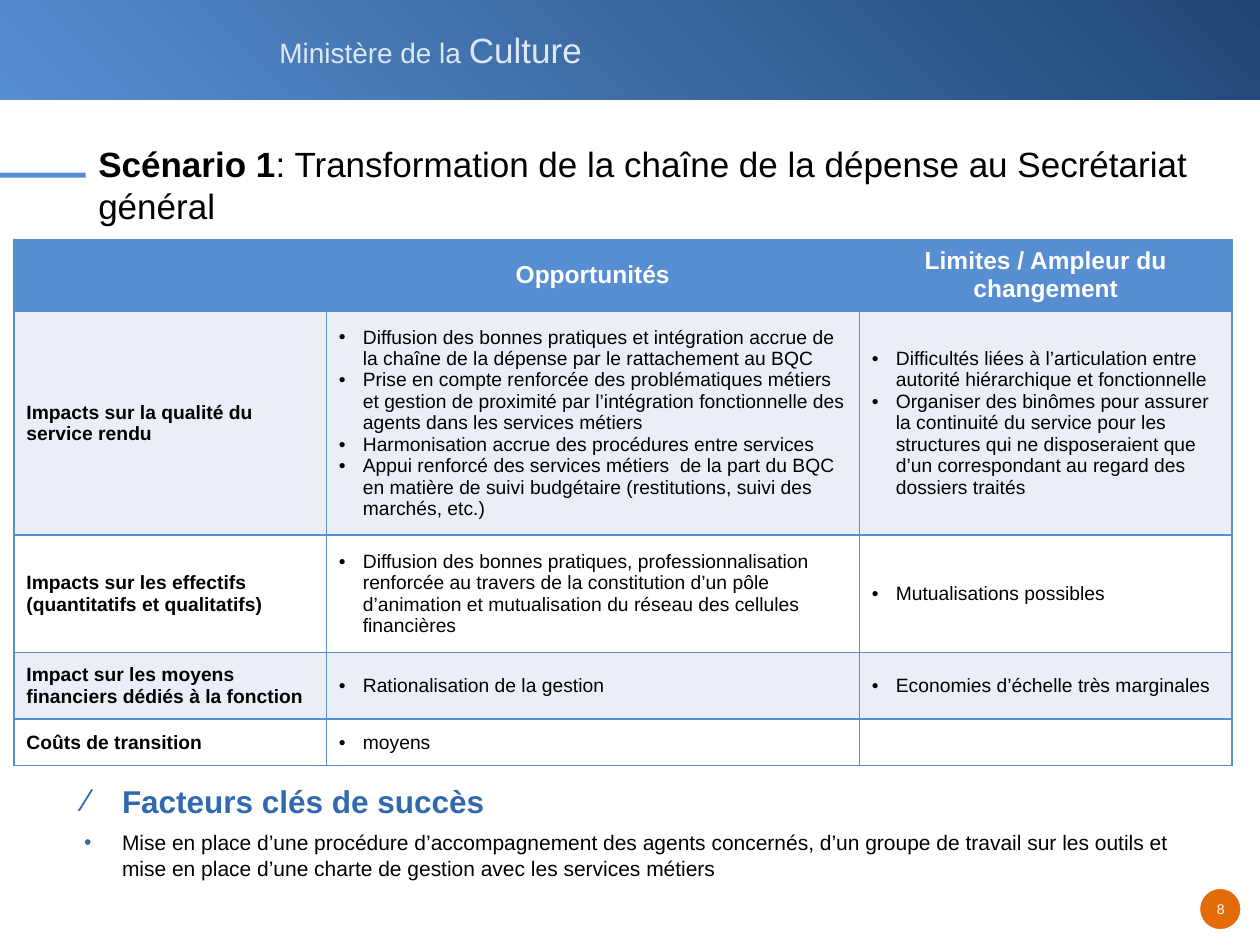
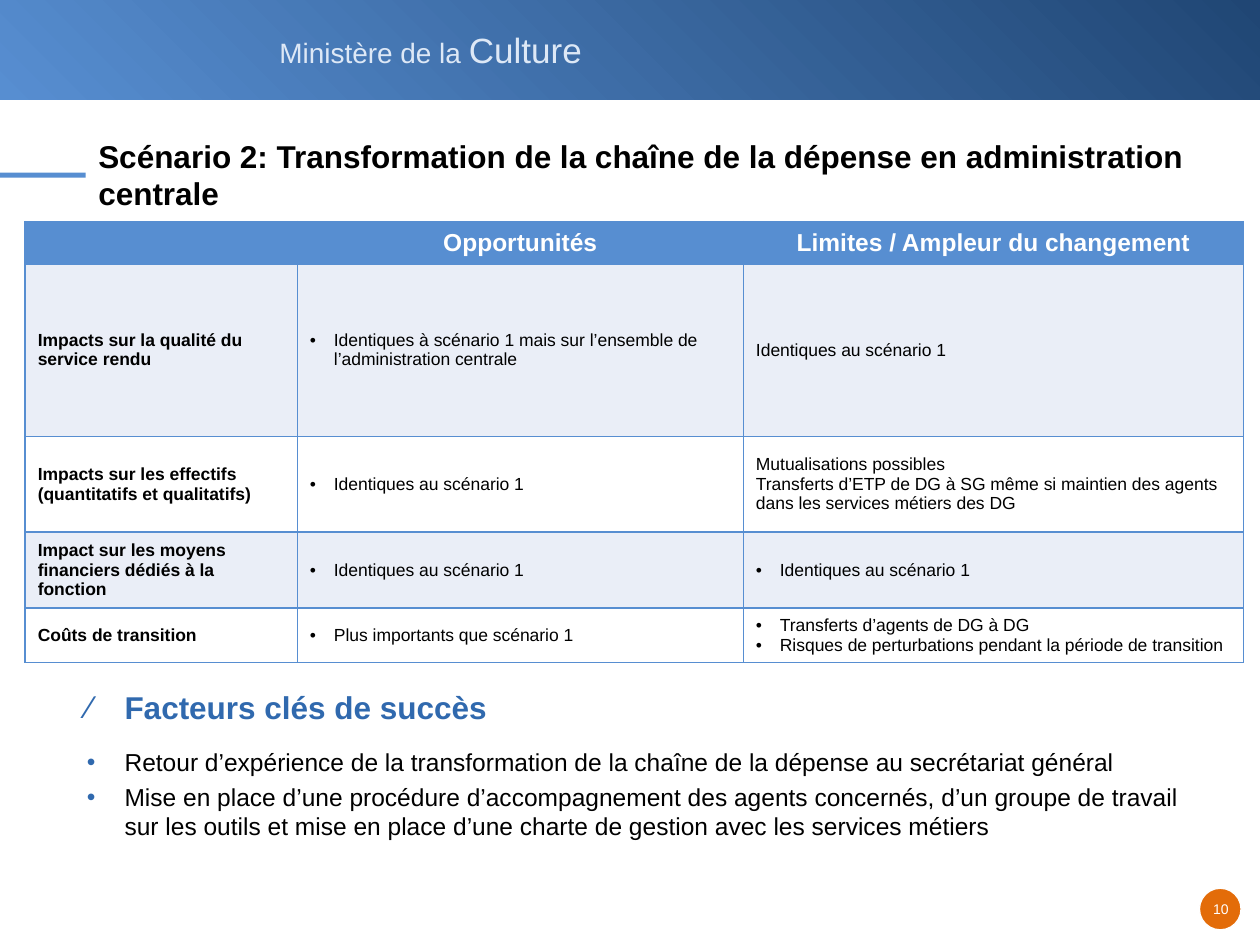
from dataclasses import dataclass
from typing import NamedTuple

from lxml.etree import SubElement
from pptx import Presentation
from pptx.dml.color import RGBColor
from pptx.enum.shapes import MSO_SHAPE
from pptx.enum.text import MSO_ANCHOR, MSO_AUTO_SIZE, PP_ALIGN
from pptx.oxml.ns import qn
from pptx.util import Emu, Pt

EMU_PER_PX = 9144


@dataclass(frozen=True)
class Theme:
    font: str = "Arial"
    blue: str = "578ED1"
    navy: str = "204674"
    heading: str = "3069AE"
    banner_text: str = "DDE8F6"
    orange: str = "E36C09"
    tint: str = "EAEEF7"
    white: str = "FFFFFF"
    black: str = "000000"
    ministry_size: int = 16
    name_size: int = 20
    heading_size: int = 18
    header_size: int = 14
    number_size: int = 8


class Box(NamedTuple):
    x: int
    y: int
    w: int
    h: int


class Run(NamedTuple):
    text: str
    bold: bool = False


class Cell(NamedTuple):
    lines: tuple[str, ...] = ()
    bullet: bool = True


class Row(NamedTuple):
    height: int
    label: str
    opportunities: Cell
    limits: Cell


@dataclass(frozen=True)
class Scenario:
    number: str
    title: tuple[Run, ...]
    title_box: Box
    title_size: int
    table_at: tuple[int, int]
    columns: tuple[int, ...]
    header_height: int
    table_size: int
    rows: tuple[Row, ...]
    factors_box: Box
    factors: tuple[str, ...]
    factors_size: int
    heading_gap: int


THEME = Theme()
HEADERS = ("", "Opportunités", "Limites / Ampleur du changement")
LABELS = (
    "Impacts sur la qualité du service rendu",
    "Impacts sur les effectifs (quantitatifs et qualitatifs)",
    "Impact sur les moyens financiers dédiés à la fonction",
    "Coûts de transition",
)
SAME = "Identiques au scénario 1"
SUPPORT = (
    "Mise en place d’une procédure d’accompagnement des agents concernés, d’un groupe de "
    "travail sur les outils et mise en place d’une charte de gestion avec les services métiers"
)

SCENARIOS = (
    Scenario(
        number="8",
        title=(
            Run("Scénario 1", True),
            Run(": Transformation de la chaîne de la dépense au Secrétariat général"),
        ),
        title_box=Box(68, 106, 888, 81),
        title_size=20,
        table_at=(11, 190),
        columns=(248, 423, 296),
        header_height=54,
        table_size=11,
        rows=(
            Row(178, LABELS[0], Cell((
                "Diffusion des bonnes pratiques et intégration accrue de la chaîne de la "
                "dépense par le rattachement au BQC",
                "Prise en compte renforcée des problématiques métiers et gestion de proximité "
                "par l’intégration fonctionnelle des agents dans les services métiers",
                "Harmonisation accrue des procédures entre services",
                "Appui renforcé des services métiers  de la part du BQC en matière de suivi "
                "budgétaire (restitutions, suivi des marchés, etc.)",
            )), Cell((
                "Difficultés liées à l’articulation entre autorité hiérarchique et fonctionnelle",
                "Organiser des binômes pour assurer la continuité du service pour les "
                "structures qui ne disposeraient que d’un correspondant au regard des "
                "dossiers traités",
            ))),
            Row(93, LABELS[1], Cell((
                "Diffusion des bonnes pratiques, professionnalisation renforcée au travers de "
                "la constitution d’un pôle d’animation et mutualisation du réseau des "
                "cellules financières",
            )), Cell(("Mutualisations possibles",))),
            Row(53, LABELS[2], Cell(("Rationalisation de la gestion",)),
                Cell(("Economies d’échelle très marginales",))),
            Row(37, LABELS[3], Cell(("moyens",)), Cell()),
        ),
        factors_box=Box(57, 619, 889, 97),
        factors=(SUPPORT,),
        factors_size=12,
        heading_gap=6,
    ),
    Scenario(
        number="10",
        title=(
            Run("Scénario 2: Transformation de la chaîne de la dépense en administration "
                "centrale", True),
        ),
        title_box=Box(68, 106, 888, 65),
        title_size=18,
        table_at=(20, 176),
        columns=(216, 354, 397),
        header_height=33,
        table_size=10,
        rows=(
            Row(137, LABELS[0], Cell((
                "Identiques à scénario 1 mais sur l’ensemble de l’administration centrale",
            )), Cell((SAME,), bullet=False)),
            Row(76, LABELS[1], Cell((SAME,)), Cell((
                "Mutualisations possibles",
                "Transferts d’ETP de DG à SG même si maintien des agents dans les services "
                "métiers des DG",
            ), bullet=False)),
            Row(59, LABELS[2], Cell((SAME,)), Cell((SAME,))),
            Row(43, LABELS[3], Cell(("Plus importants que scénario 1",)), Cell((
                "Transferts d’agents de DG à DG",
                "Risques de perturbations pendant la période de transition",
            ))),
        ),
        factors_box=Box(59, 545, 889, 152),
        factors=(
            "Retour d’expérience de la transformation de la chaîne de la dépense au "
            "secrétariat général",
            SUPPORT,
        ),
        factors_size=14,
        heading_gap=12,
    ),
)


def px(n: int) -> Emu:
    return Emu(n * EMU_PER_PX)


def rgb(color: str) -> RGBColor:
    return RGBColor.from_string(color)


def add_run(p, text: str, *, size: int, color: str = THEME.black, bold: bool = False) -> None:
    r = p.add_run()
    r.text = text
    r.font.name = THEME.font
    r.font.size = Pt(size)
    r.font.bold = bold
    r.font.color.rgb = rgb(color)


def add_bullet(p, char: str, indent: int, color: str | None = None) -> None:
    ppr = p._p.get_or_add_pPr()
    ppr.set("marL", str(px(indent)))
    ppr.set("indent", str(-px(indent)))
    if color:
        SubElement(SubElement(ppr, qn("a:buClr")), qn("a:srgbClr"), val=color)
    SubElement(ppr, qn("a:buFont"), typeface=THEME.font)
    SubElement(ppr, qn("a:buChar"), char=char)


def next_paragraph(tf, index: int):
    return tf.add_paragraph() if index else tf.paragraphs[0]


def add_text_box(s, box: Box, wrap: bool = True):
    tf = s.shapes.add_textbox(*map(px, box)).text_frame
    tf.word_wrap = wrap
    return tf


def add_block(s, kind: MSO_SHAPE, box: Box, color: str | None = None):
    sp = s.shapes.add_shape(kind, *map(px, box))
    sp.shadow.inherit = False
    sp.line.fill.background()
    if color:
        sp.fill.solid()
        sp.fill.fore_color.rgb = rgb(color)
    return sp


def add_frame(s, number: str) -> None:
    band = add_block(s, MSO_SHAPE.RECTANGLE, Box(0, 0, 1000, 79))
    band.fill.gradient()
    band.fill.gradient_angle = 225
    for stop, color in zip(band.fill.gradient_stops, (THEME.navy, THEME.blue)):
        stop.color.rgb = rgb(color)
    p = add_text_box(s, Box(212, 18, 263, 44), wrap=False).paragraphs[0]
    add_run(p, "Ministère de la ", size=THEME.ministry_size, color=THEME.banner_text)
    add_run(p, "Culture", size=THEME.name_size, color=THEME.banner_text)

    add_block(s, MSO_SHAPE.RECTANGLE, Box(0, 137, 68, 4), THEME.blue)
    badge = add_block(s, MSO_SHAPE.OVAL, Box(952, 705, 33, 33), THEME.orange)
    badge.line.color.rgb = rgb(THEME.white)
    badge.line.width = Pt(0.75)
    tf = add_text_box(s, Box(954, 710, 30, 23), wrap=False)
    tf.margin_left = tf.margin_right = tf.margin_top = tf.margin_bottom = px(5)
    p = tf.paragraphs[0]
    p.alignment = PP_ALIGN.CENTER
    add_run(p, number, size=THEME.number_size, color=THEME.white)


def set_title(s, runs: tuple[Run, ...], box: Box, size: int) -> None:
    sp = s.shapes.title
    sp.left, sp.top, sp.width, sp.height = map(px, box)
    tf = sp.text_frame
    tf.word_wrap = True
    tf.auto_size = MSO_AUTO_SIZE.NONE
    tf.vertical_anchor = MSO_ANCHOR.MIDDLE
    p = tf.paragraphs[0]
    p.alignment = PP_ALIGN.LEFT
    for run in runs:
        add_run(p, run.text, size=size, bold=run.bold)


def fill_cell(cell, content: Cell, *, fill: str, size: int, color: str = THEME.black,
              bold: bool = False, align: PP_ALIGN = PP_ALIGN.LEFT) -> None:
    tcpr = cell._tc.get_or_add_tcPr()
    for side in ("lnL", "lnR", "lnT", "lnB"):
        ln = SubElement(tcpr, qn(f"a:{side}"), w=str(Pt(1)))
        SubElement(SubElement(ln, qn("a:solidFill")), qn("a:srgbClr"), val=THEME.blue)
    cell.fill.solid()
    cell.fill.fore_color.rgb = rgb(fill)
    cell.vertical_anchor = MSO_ANCHOR.MIDDLE
    tf = cell.text_frame
    for i, line in enumerate(content.lines):
        p = next_paragraph(tf, i)
        p.alignment = align
        if content.bullet:
            add_bullet(p, "•", 19)
        add_run(p, line, size=size, color=color, bold=bold)
    if not content.lines:
        SubElement(tf.paragraphs[0]._p, qn("a:endParaRPr"), sz=str(size * 100))


def add_impacts(s, sc: Scenario) -> None:
    heights = (sc.header_height, *(row.height for row in sc.rows))
    box = Box(*sc.table_at, sum(sc.columns), sum(heights))
    table = s.shapes.add_table(len(heights), len(sc.columns), *map(px, box)).table
    table.horz_banding = False
    for column, width in zip(table.columns, sc.columns):
        column.width = px(width)
    for row, height in zip(table.rows, heights):
        row.height = px(height)
    for c, header in enumerate(HEADERS):
        content = Cell((header,) if header else (), bullet=False)
        fill_cell(table.cell(0, c), content, fill=THEME.blue, size=THEME.header_size,
                  color=THEME.white, bold=True, align=PP_ALIGN.CENTER)
    for i, row in enumerate(sc.rows, 1):
        fill = THEME.tint if i % 2 else THEME.white
        cells = (Cell((row.label,), bullet=False), row.opportunities, row.limits)
        for c, content in enumerate(cells):
            fill_cell(table.cell(i, c), content, fill=fill, size=sc.table_size, bold=c == 0)


def add_factors(s, sc: Scenario) -> None:
    tf = add_text_box(s, sc.factors_box)
    p = tf.paragraphs[0]
    p.line_spacing = Pt(19)
    p.space_after = Pt(sc.heading_gap)
    add_bullet(p, "⁄", 30, THEME.heading)
    add_run(p, "Facteurs clés de succès", size=THEME.heading_size, color=THEME.heading, bold=True)
    for factor in sc.factors:
        p = tf.add_paragraph()
        p.space_after = Pt(3)
        add_bullet(p, "•", 30, THEME.heading)
        add_run(p, factor, size=sc.factors_size)


def main() -> None:
    prs = Presentation()
    prs.slide_width, prs.slide_height = px(1000), px(750)
    for sc in SCENARIOS:
        s = prs.slides.add_slide(prs.slide_layouts[5])
        add_frame(s, sc.number)
        set_title(s, sc.title, sc.title_box, sc.title_size)
        add_impacts(s, sc)
        add_factors(s, sc)
    prs.save("out.pptx")


if __name__ == "__main__":
    main()
